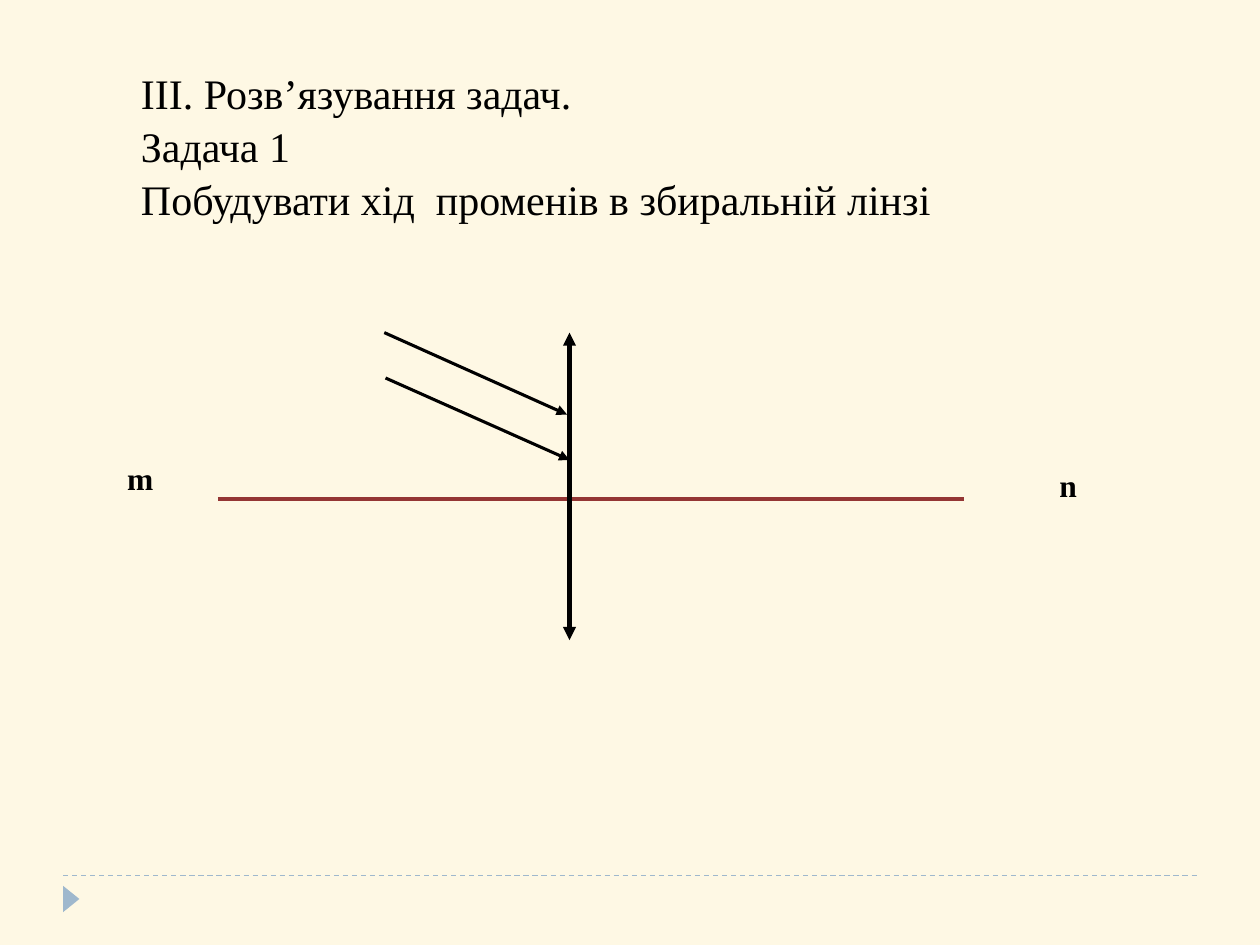
"""Builds the slide with a converging-lens ray problem."""
from dataclasses import dataclass

from pptx import Presentation
from pptx.dml.color import RGBColor
from pptx.enum import dml, shapes, text
from pptx.oxml.ns import qn
from pptx.util import Inches, Pt


@dataclass(frozen=True)
class Theme:
    """Colours, font and type sizes."""
    paper: RGBColor = RGBColor.from_string("FEF8E4")
    ink: RGBColor = RGBColor.from_string("000000")
    axis: RGBColor = RGBColor.from_string("943634")
    trim: RGBColor = RGBColor.from_string("9FB8CD")
    font: str = "Times New Roman"
    heading: int = 24
    label: int = 18


@dataclass(frozen=True)
class Line:
    """A straight line, in inches, with optional arrowheads."""
    start: tuple[float, float]
    end: tuple[float, float]
    color: RGBColor
    width: float
    heads: tuple[str, ...] = ()
    dashed: bool = False


@dataclass(frozen=True)
class Label:
    """A text box, in inches, with one paragraph per line."""
    box: tuple[float, float, float, float]
    lines: tuple[str, ...]
    size: int
    bold: bool = False
    spacing: float = 1.0


T = Theme()
LENS_X, LENS_TOP, LENS_BOTTOM = 4.52, 2.64, 5.08
AXIS_Y = 3.96

LINES = (
    Line((0.5, 6.95), (9.5, 6.95), T.trim, 0.75, dashed=True),
    Line((1.73, AXIS_Y), (7.65, AXIS_Y), T.axis, 2.5),
    Line((LENS_X, LENS_TOP), (LENS_X, LENS_BOTTOM), T.ink, 2.5, ("headEnd", "tailEnd")),
    Line((3.05, LENS_TOP), (4.5, 3.29), T.ink, 1.75, ("tailEnd",)),
    Line((3.06, 3), (LENS_X, 3.65), T.ink, 1.75, ("tailEnd",)),
)
LABELS = (
    Label((8.31, 3.65, 0.99, 0.81), ("n",), T.label, bold=True),
    Label((0.91, 3.59, 0.99, 0.81), ("m",), T.label, bold=True),
    Label((1.02, 0.47, 8.05, 1.62),
          ("ІІІ. Розв’язування задач.", "Задача 1",
           "Побудувати хід  променів в збиральній лінзі"),
          T.heading, spacing=1.05),
)


def draw_line(s, line: Line) -> None:
    """Draws a connector without shadow."""
    ends = [Inches(v) for v in (*line.start, *line.end)]
    cx = s.shapes.add_connector(shapes.MSO_CONNECTOR.STRAIGHT, *ends)
    cx.line.color.rgb = line.color
    cx.line.width = Pt(line.width)
    if line.dashed:
        cx.line.dash_style = dml.MSO_LINE.DASH
    ln = cx.line._get_or_add_ln()
    for head in line.heads:
        ln.append(ln.makeelement(qn(f"a:{head}"), {"type": "triangle"}))
    sp_pr = cx._element.spPr
    sp_pr.append(sp_pr.makeelement(qn("a:effectLst"), {}))


def draw_label(s, label: Label) -> None:
    """Draws a wrapped text box."""
    tf = s.shapes.add_textbox(*map(Inches, label.box)).text_frame
    tf.word_wrap = True
    tf.vertical_anchor = text.MSO_ANCHOR.TOP
    fmt = {"name": T.font, "size": Pt(label.size), "bold": label.bold}
    for i, line in enumerate(label.lines):
        p = tf.add_paragraph() if i else tf.paragraphs[0]
        p.line_spacing = label.spacing
        r = p.add_run()
        r.text = line
        for key, value in fmt.items():
            setattr(r.font, key, value)
        r.font.color.rgb = T.ink


def draw_marker(s) -> None:
    """Draws the footer triangle pointing right."""
    box = map(Inches, (0.46, 7.07, 0.21, 0.13))
    sp = s.shapes.add_shape(shapes.MSO_SHAPE.ISOSCELES_TRIANGLE, *box)
    sp.rotation = 90
    sp.shadow.inherit = False
    sp.fill.solid()
    sp.fill.fore_color.rgb = T.trim
    sp.line.fill.background()


def main() -> None:
    """Builds and saves the deck."""
    prs = Presentation()
    prs.slide_width, prs.slide_height = Inches(10), Inches(7.5)
    s = prs.slides.add_slide(prs.slide_layouts[6])
    s.background.fill.solid()
    s.background.fill.fore_color.rgb = T.paper
    draw_marker(s)
    for line in LINES:
        draw_line(s, line)
    for label in LABELS:
        draw_label(s, label)
    prs.save("out.pptx")


if __name__ == "__main__":
    main()
